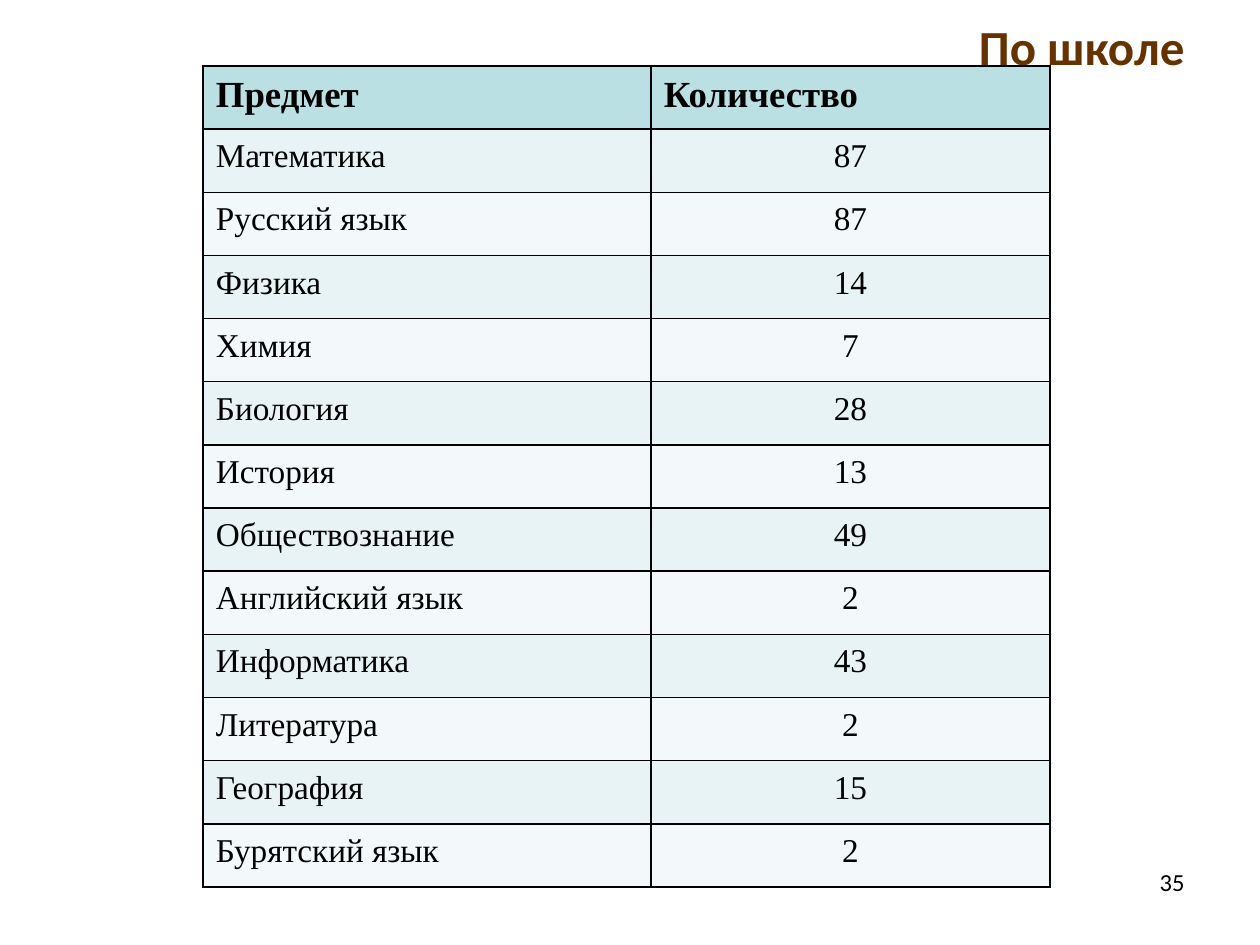
import pptx
import pptx.dml.color
import pptx.enum.shapes
import pptx.enum.text
import pptx.oxml
import pptx.oxml.ns
import pptx.util
from dataclasses import dataclass

EMU_PER_PX = 914400 // 126
ALIGN = pptx.enum.text.PP_ALIGN
ANCHOR = pptx.enum.text.MSO_ANCHOR


@dataclass(frozen=True)
class Theme:
    heading_font: str = "Calibri"
    table_font: str = "Times New Roman"
    title_color: str = "663300"
    title_panel: str = "FFFFFF"
    ink: str = "000000"
    header_fill: str = "BBE0E3"
    band_fills: tuple = ("E7F3F4", "F3F9FA")
    title_size: int = 28
    header_size: int = 21
    body_size: int = 19
    number_size: int = 14
    panel_line_width: float = 1.5
    border_width: int = 1


THEME = Theme()
HEADER = ("Предмет", "Количество")
SUBJECTS = (
    ("Математика", 87),
    ("Русский язык", 87),
    ("Физика", 14),
    ("Химия", 7),
    ("Биология", 28),
    ("История", 13),
    ("Обществознание", 49),
    ("Английский язык", 2),
    ("Информатика", 43),
    ("Литература", 2),
    ("География", 15),
    ("Бурятский язык", 2),
)


def px(length):
    return pptx.util.Emu(length * EMU_PER_PX)


def rgb(color):
    return pptx.dml.color.RGBColor.from_string(color)


def write(frame, text, font, size, color, align, bold=False):
    paragraph = frame.paragraphs[0]
    paragraph.alignment = align
    run = paragraph.add_run()
    run.text = text
    run.font.name = font
    run.font.size = pptx.util.Pt(size)
    run.font.color.rgb = rgb(color)
    run.font.bold = bold


def add_title(slide, box, text):
    panel = slide.shapes.add_shape(
        pptx.enum.shapes.MSO_SHAPE.RECTANGLE, *map(px, box))
    panel.shadow.inherit = False
    panel.fill.solid()
    panel.fill.fore_color.rgb = rgb(THEME.title_panel)
    panel.line.color.rgb = rgb(THEME.title_panel)
    panel.line.width = pptx.util.Pt(THEME.panel_line_width)
    panel.text_frame.word_wrap = True
    panel.text_frame.vertical_anchor = ANCHOR.MIDDLE
    write(panel.text_frame, text, THEME.heading_font, THEME.title_size,
          THEME.title_color, ALIGN.RIGHT, bold=True)


def add_page_number(slide, box, number):
    frame = slide.shapes.add_textbox(*map(px, box)).text_frame
    frame.word_wrap = True
    write(frame, number, THEME.heading_font, THEME.number_size,
          THEME.ink, ALIGN.RIGHT)


def set_borders(cell):
    """Put the four border lines ahead of the cell's fill, as the schema asks."""
    properties = cell._tc.get_or_add_tcPr()
    width = pptx.util.Pt(THEME.border_width)
    for position, side in enumerate(("lnL", "lnR", "lnT", "lnB")):
        properties.insert(position, pptx.oxml.parse_xml(
            f'<a:{side} {pptx.oxml.ns.nsdecls("a")} w="{width}"><a:solidFill>'
            f'<a:srgbClr val="{THEME.ink}"/></a:solidFill></a:{side}>'))


def fill_cell(cell, text, fill, size, align, bold):
    cell.margin_left = cell.margin_right = px(13)
    cell.margin_top = cell.margin_bottom = px(9)
    cell.fill.solid()
    cell.fill.fore_color.rgb = rgb(fill)
    set_borders(cell)
    write(cell.text_frame, text, THEME.table_font, size, THEME.ink, align, bold)


def add_subject_table(slide, left, top, column_widths, height):
    rows = (HEADER,) + SUBJECTS
    table = slide.shapes.add_table(
        len(rows), len(HEADER), px(left), px(top),
        px(sum(column_widths)), px(height)).table
    for column, width in zip(table.columns, column_widths):
        column.width = px(width)
    for row_index, values in enumerate(rows):
        table.rows[row_index].height = px(height) // len(rows)
        is_header = row_index == 0
        fill = THEME.header_fill if is_header else THEME.band_fills[(row_index - 1) % 2]
        size = THEME.header_size if is_header else THEME.body_size
        for column_index, value in enumerate(values):
            centred = column_index == 1 and not is_header
            fill_cell(table.cell(row_index, column_index), str(value), fill, size,
                      ALIGN.CENTER if centred else ALIGN.LEFT, is_header)


def main():
    deck = pptx.Presentation()
    deck.slide_width, deck.slide_height = px(1260), px(945)
    slide = deck.slides.add_slide(deck.slide_layouts[6])

    # Title on its white panel
    add_title(slide, (63, 1, 1134, 90), "По школе")
    # Exam subjects and counts
    add_subject_table(slide, 203, 66, (448, 399), 821)
    # Page number
    add_page_number(slide, (1017, 861, 180, 66), "35")

    deck.save("out.pptx")


if __name__ == "__main__":
    main()
